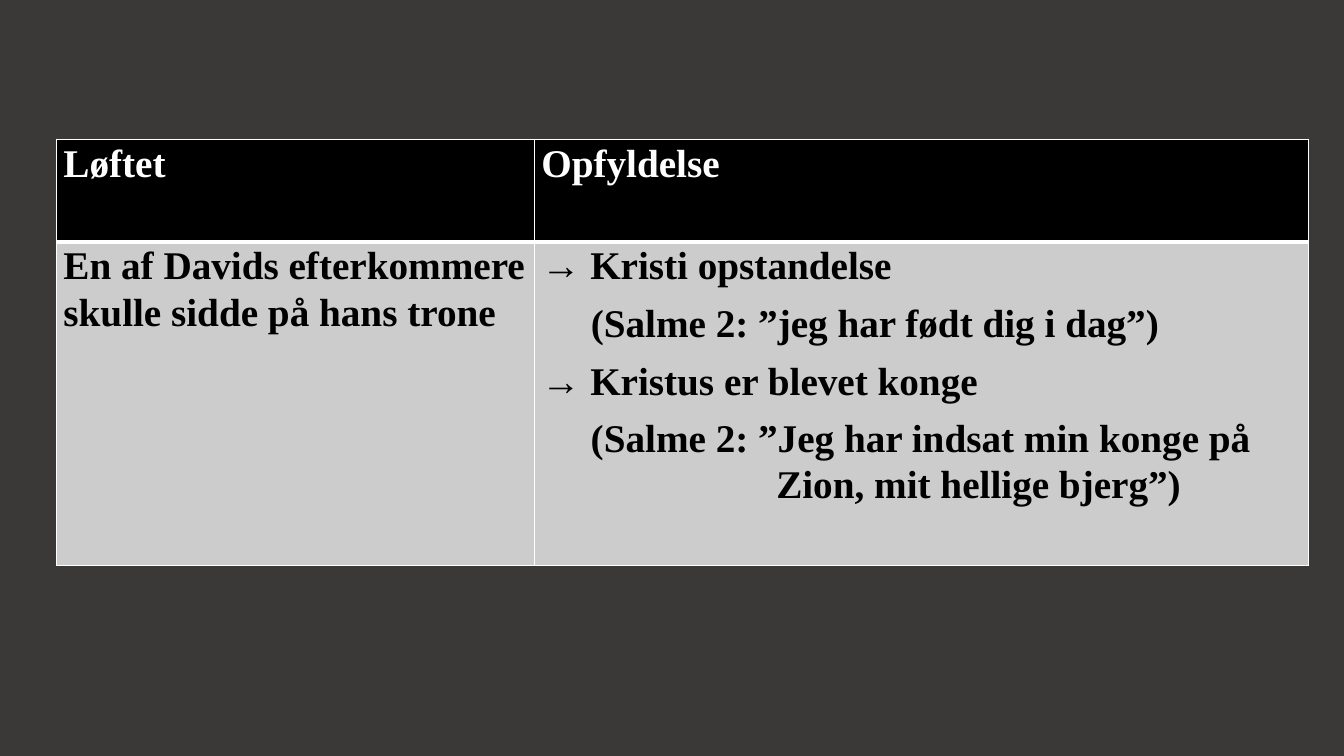
import pptx
import pptx.dml.color
import pptx.oxml
import pptx.oxml.ns
import pptx.util
from pptx.util import Inches, Pt

BACKGROUND = pptx.dml.color.RGBColor(0x3B, 0x38, 0x38)
BLACK = pptx.dml.color.RGBColor(0, 0, 0)
WHITE = pptx.dml.color.RGBColor(0xFF, 0xFF, 0xFF)
GREY = pptx.dml.color.RGBColor(0xCC, 0xCC, 0xCC)

COLUMN_WIDTHS = (4.74, 7.68)
ROW_HEIGHTS = (1.02, 3.21)
QUOTE_INDENT = 0.49
CONTINUATION_INDENT = 2.33
HEADINGS = ("Løftet", "Opfyldelse")
PROMISE = "En af Davids efterkommere skulle sidde på hans trone"
FULFILMENT = (
    "→ Kristi opstandelse",
    "(Salme 2: ”jeg har født dig i dag”)",
    "→ Kristus er blevet konge",
    "(Salme 2: ”Jeg har indsat min konge på\vZion, mit hellige bjerg”)",
)


def set_borders(cell, bottom_width):
    """Draw white lines round a cell, with its own width at the bottom."""
    properties = cell._tc.get_or_add_tcPr()
    widths = {"lnL": 1, "lnR": 1, "lnT": 1, "lnB": bottom_width}
    for position, (tag, width) in enumerate(widths.items()):
        properties.insert(position, pptx.oxml.parse_xml(
            f'<a:{tag} {pptx.oxml.ns.nsdecls("a")} w="{Pt(width)}">'
            f'<a:solidFill><a:srgbClr val="{WHITE}"/></a:solidFill></a:{tag}>'))


def fill_cell(cell, lines, fill, color, bottom_width):
    """Write a cell's paragraphs, indenting the quotations."""
    cell.fill.solid()
    cell.fill.fore_color.rgb = fill
    cell.margin_left = cell.margin_right = Inches(0.07)
    cell.margin_top = cell.margin_bottom = 0
    set_borders(cell, bottom_width)
    cell.text_frame.text = "\n".join(lines)
    for paragraph, line in zip(cell.text_frame.paragraphs, lines):
        paragraph.line_spacing = 1.07
        paragraph.space_after = Pt(8)
        paragraph.font.name = "Times New Roman"
        paragraph.font.size = Pt(28)
        paragraph.font.bold = True
        paragraph.font.color.rgb = color
        if line.startswith("("):
            margin = CONTINUATION_INDENT if "\v" in line else QUOTE_INDENT
            properties = paragraph._p.get_or_add_pPr()
            properties.set("marL", str(Inches(margin)))
            properties.set("indent", str(Inches(QUOTE_INDENT - margin)))


def add_promise_table(slide, left, top):
    """Place the table of promise and fulfilment at the given corner."""
    table = slide.shapes.add_table(
        len(ROW_HEIGHTS), len(COLUMN_WIDTHS), Inches(left), Inches(top),
        Inches(sum(COLUMN_WIDTHS)), Inches(sum(ROW_HEIGHTS))).table
    for column, width in zip(table.columns, COLUMN_WIDTHS):
        column.width = Inches(width)
    for row, height in zip(table.rows, ROW_HEIGHTS):
        row.height = Inches(height)
    for index, (heading, body) in enumerate(zip(HEADINGS, ((PROMISE,), FULFILMENT))):
        fill_cell(table.cell(0, index), (heading,), BLACK, WHITE, 3)
        fill_cell(table.cell(1, index), body, GREY, BLACK, 1)


def main():
    """Build and save the presentation."""
    presentation = pptx.Presentation()
    presentation.slide_width = Inches(13.33)
    presentation.slide_height = Inches(7.5)
    slide = presentation.slides.add_slide(presentation.slide_layouts[6])
    slide.background.fill.solid()
    slide.background.fill.fore_color.rgb = BACKGROUND
    add_promise_table(slide, 0.56, 1.38)
    presentation.save("out.pptx")


if __name__ == "__main__":
    main()
